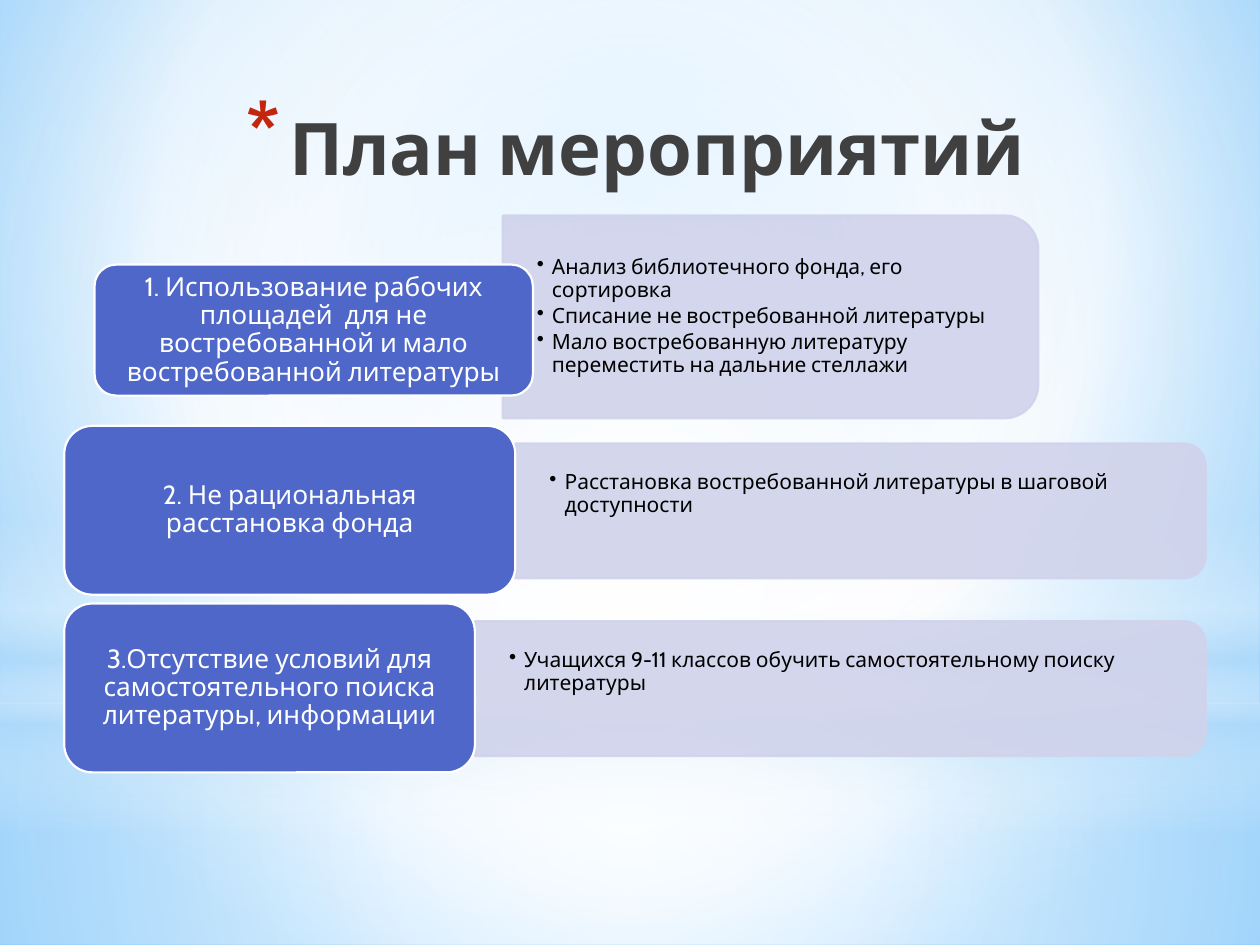
"""Builds the slide with the plan of library measures."""
from lxml import etree
from pptx import Presentation
from pptx.dml.color import RGBColor
from pptx.enum.shapes import MSO_SHAPE
from pptx.enum.text import MSO_ANCHOR, MSO_AUTO_SIZE, PP_ALIGN
from pptx.oxml.ns import qn
from pptx.util import Inches, Pt

RECT, ELLIPSE = MSO_SHAPE.RECTANGLE, MSO_SHAPE.OVAL
PANEL, LABEL = MSO_SHAPE.ROUND_2_SAME_RECTANGLE, MSO_SHAPE.ROUNDED_RECTANGLE
TOP, MIDDLE = MSO_ANCHOR.TOP, MSO_ANCHOR.MIDDLE
CENTER, NO_FIT = PP_ALIGN.CENTER, MSO_AUTO_SIZE.NONE

THEME = {
    "font": "Cabin",
    "title": {"size": Pt(41.4), "color": RGBColor.from_string("404040"), "bold": True},
    "label": {"size": Pt(15), "color": RGBColor.from_string("FFFFFF"), "bold": False},
    "item": {"size": Pt(12), "color": RGBColor.from_string("000000"), "bold": False},
    "star": "C3260C",
    "panel": RGBColor.from_string("D0D3EB"),
    "label_fill": RGBColor.from_string("4E67C8"),
    "label_line": RGBColor.from_string("FFFFFF"),
    "outline": Pt(1.25),
    "sky": [(0, "9ED5FF", 100), (60, "FFFFFF", 100), (100, "5BB9FF", 100)],
    "lower": [(0, "FFFFFF", 91), (37, "FFFFFF", 76), (100, "B4DCFA", 79)],
    "upper": [(0, "FFFFFF", 89), (48, "FFFFFF", 62), (100, "B4DCFA", 79)],
    "horizon": [(0, "FFFFFF", 0), (29, "FFFFFF", 30), (45, "B4DCFA", 40),
                (55, "FFFFFF", 26), (65, "B4DCFA", 60), (100, "FFFFFF", 0)],
    "glow": [(0, "FFFFFF", 100), (56, "FFFFFF", 0)],
}


def set_gradient(owner, stops, focus):
    """Fill with a circular gradient around focus, or a vertical one without it."""
    gradient = owner.find(".//" + qn("a:gradFill"))
    for child in list(gradient):
        gradient.remove(child)
    stop_list = etree.SubElement(gradient, qn("a:gsLst"))
    for position, color, opacity in stops:
        stop = etree.SubElement(stop_list, qn("a:gs"), pos=str(position * 1000))
        tint = etree.SubElement(stop, qn("a:srgbClr"), val=color)
        etree.SubElement(tint, qn("a:alpha"), val=str(opacity * 1000))
    if focus:
        circle = etree.SubElement(gradient, qn("a:path"), path="circle")
        edges = {side: str(value * 1000) for side, value in zip("ltrb", focus)}
        etree.SubElement(circle, qn("a:fillToRect"), edges)
    else:
        etree.SubElement(gradient, qn("a:lin"), ang="5400000", scaled="0")


def write_line(paragraph, text, style, bullet=None, hang=0, bullet_color=None, percent=100):
    """Write one styled paragraph with an optional hanging bullet."""
    run = paragraph.add_run()
    run.text = text
    run.font.name = THEME["font"]
    run.font.size, run.font.bold = style["size"], style["bold"]
    run.font.color.rgb = style["color"]
    if bullet:
        properties = paragraph._p.get_or_add_pPr()
        properties.set("marL", str(Inches(hang)))
        properties.set("indent", str(-Inches(hang)))
        if bullet_color:
            holder = etree.SubElement(properties, qn("a:buClr"))
            etree.SubElement(holder, qn("a:srgbClr"), val=bullet_color)
        etree.SubElement(properties, qn("a:buSzPct"), val=str(percent * 1000))
        etree.SubElement(properties, qn("a:buChar"), char=bullet)


deck = Presentation()
deck.slide_width, deck.slide_height = Inches(10), Inches(7.5)
slide = deck.slides.add_slide(deck.slide_layouts[5])
slide.background.fill.gradient()
set_gradient(slide._element, THEME["sky"], (20, 10, 20, 60))

heading = slide.shapes.title
heading.left, heading.top = Inches(0.5), Inches(0.77)
heading.width, heading.height = Inches(9.08), Inches(0.78)
heading.text_frame.auto_size = NO_FIT
heading.text_frame.vertical_anchor = MIDDLE
heading_line = heading.text_frame.paragraphs[0]
heading_line.alignment = CENTER
write_line(heading_line, "План мероприятий", THEME["title"], "*", 0.35, THEME["star"], 128)

CENTERED = (50, 50, 50, 50)
SCENERY = [
    (RECT, 5.58, 1.92, "lower", CENTERED),
    (RECT, 0, 5.58, "upper", CENTERED),
    (RECT, 4.12, 2.5, "horizon", None),
    (ELLIPSE, 1.75, 5.58, "glow", CENTERED),
]
for outline, top, height, stops, focus in SCENERY:
    layer = slide.shapes.add_shape(outline, 0, Inches(top), Inches(10), Inches(height))
    layer.shadow.inherit = False
    layer.line.fill.background()
    layer.fill.gradient()
    set_gradient(layer._element, THEME[stops], focus)
    heading._element.addprevious(layer._element)

MEASURES = [
    {"problem": "1. Использование рабочих площадей  для не востребованной и мало "
                "востребованной литературы",
     "actions": ["Анализ библиотечного фонда, его сортировка",
                 "Списание не востребованной литературы",
                 "Мало востребованную литературу переместить на дальние стеллажи"],
     "label": (0.75, 2.1, 3.48, 1.04), "panel": (3.99, 1.71, 4.25, 1.61),
     "anchor": MIDDLE},
    {"problem": "2. Не рациональная расстановка фонда",
     "actions": ["Расстановка востребованной литературы в шаговой доступности"],
     "label": (0.51, 3.38, 3.58, 1.34), "panel": (4.09, 3.52, 5.48, 1.07),
     "anchor": TOP},
    {"problem": "3.Отсутствие условий для самостоятельного поиска литературы, информации",
     "actions": ["Учащихся 9-11 классов обучить самостоятельному поиску литературы"],
     "label": (0.51, 4.79, 3.26, 1.34), "panel": (3.77, 4.93, 5.8, 1.07),
     "anchor": TOP},
]
CORNER = 0.05

for measure in MEASURES:
    left, top, width, height = measure["panel"]
    panel = slide.shapes.add_shape(
        PANEL, Inches(left + (width - height) / 2), Inches(top + (height - width) / 2),
        Inches(height), Inches(width))
    panel.rotation = 90
    panel.shadow.inherit = False
    panel.fill.solid()
    panel.fill.fore_color.rgb = panel.line.color.rgb = THEME["panel"]
    panel.line.width = THEME["outline"]
    for tint in panel._element.spPr.iter(qn("a:srgbClr")):
        etree.SubElement(tint, qn("a:alpha"), val="90000")

    corner = height * CORNER
    actions = slide.shapes.add_textbox(
        Inches(left), Inches(top + corner),
        Inches(width - corner), Inches(height - 2 * corner)).text_frame
    margin = 0.17 if measure["anchor"] == TOP else 0.14
    for name, value in {"word_wrap": True, "vertical_anchor": measure["anchor"],
                        "margin_left": Inches(0.27), "margin_right": Inches(0.27),
                        "margin_top": Inches(margin), "margin_bottom": Inches(0.14)}.items():
        setattr(actions, name, value)
    for index, action in enumerate(measure["actions"]):
        line = actions.add_paragraph() if index else actions.paragraphs[0]
        line.line_spacing, line.space_after = 0.9, Pt(2)
        write_line(line, action, THEME["item"], "•", 0.12)

    left, top, width, height = measure["label"]
    label = slide.shapes.add_shape(
        LABEL, Inches(left), Inches(top), Inches(width), Inches(height))
    label.shadow.inherit = False
    label.fill.solid()
    label.fill.fore_color.rgb = THEME["label_fill"]
    label.line.color.rgb = THEME["label_line"]
    label.line.width = THEME["outline"]
    side, edge = Inches(height * CORNER + 0.06), Inches(height * CORNER + 0.03)
    for name, value in {"word_wrap": True, "vertical_anchor": MIDDLE,
                        "margin_left": side, "margin_right": side,
                        "margin_top": edge, "margin_bottom": edge}.items():
        setattr(label.text_frame, name, value)
    problem = label.text_frame.paragraphs[0]
    problem.alignment, problem.line_spacing = CENTER, 0.9
    write_line(problem, measure["problem"], THEME["label"])

deck.save("out.pptx")
